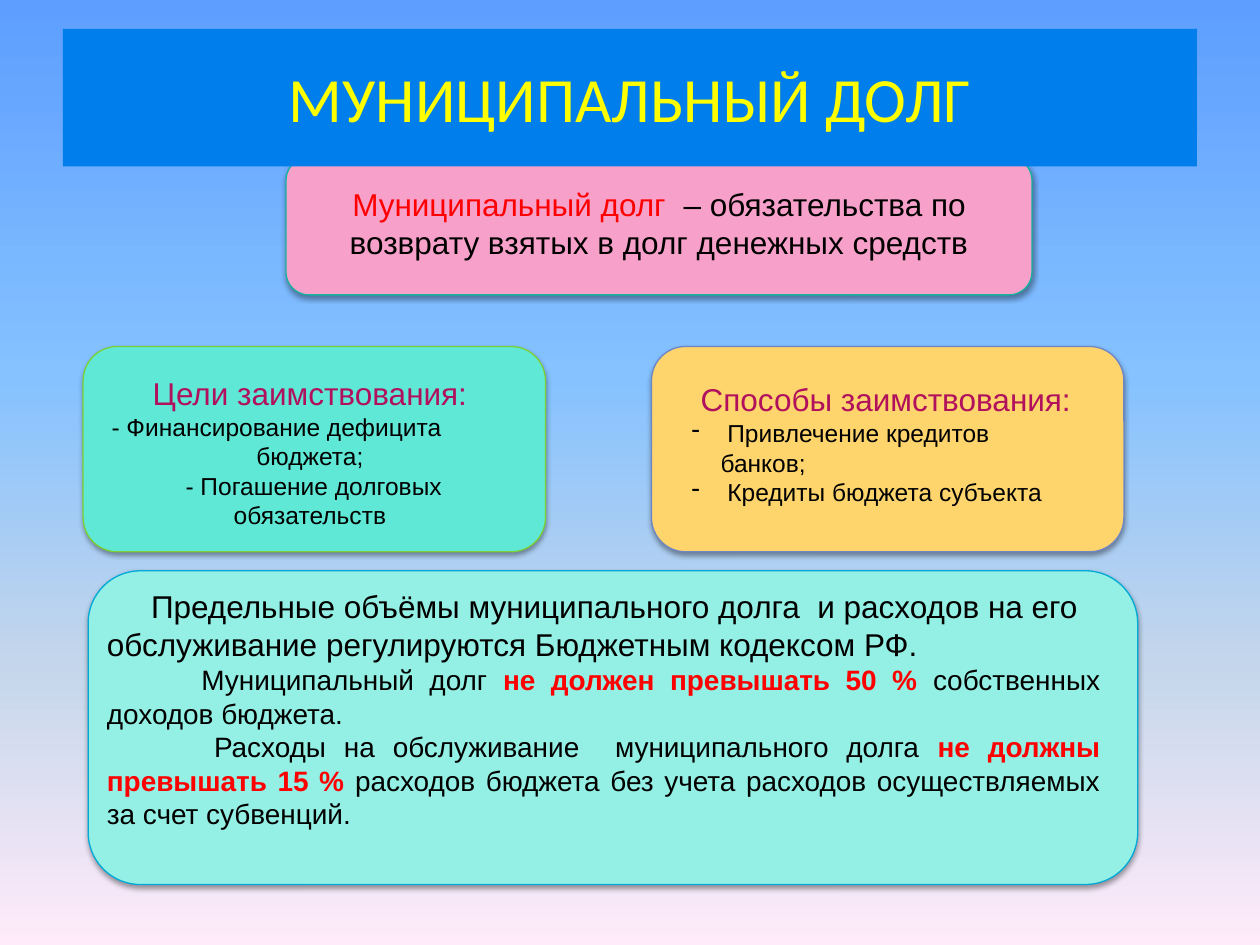
from dataclasses import dataclass
from lxml import etree
from pptx import Presentation
from pptx import util as u
from pptx.dml.color import RGBColor
from pptx.enum import shapes, text
from pptx.oxml import parse_xml
from pptx.oxml.ns import nsdecls, qn

Inches, Pt = u.Inches, u.Pt
CENTER, LEFT, JUSTIFY = text.PP_ALIGN.CENTER, text.PP_ALIGN.LEFT, text.PP_ALIGN.JUSTIFY


@dataclass(frozen=True)
class Theme:
    sky: tuple = ((0, "5E9EFF"), (40, "85C2FF"), (70, "C4D6EB"), (100, "FFEBFA"))
    banner: str = "007EEB"
    title: str = "FFFF00"
    heading: str = "B0105C"
    accent: str = "FF0000"
    ink: str = "000000"
    title_font: str = "Calibri"
    font: str = "Arial"
    title_size: int = 36
    lead_size: int = 18
    rule_size: int = 16
    item_size: int = 14


T = Theme()


def rgb(code):
    return RGBColor.from_string(code)


def set_background(s):
    """Fill the slide with the vertical sky gradient."""
    s.background.fill.gradient()
    grad = s.background._cSld.find(".//" + qn("a:gradFill"))
    stops = "".join(f'<a:gs pos="{pos * 1000}"><a:srgbClr val="{code}"/></a:gs>'
                    for pos, code in T.sky)
    grad.getparent().replace(grad, parse_xml(
        f'<a:gradFill {nsdecls("a")} rotWithShape="1"><a:gsLst>{stops}</a:gsLst>'
        '<a:lin ang="5400000" scaled="0"/></a:gradFill>'))


def add_shadow(sp):
    """Put a soft shadow just below the shape."""
    sp.shadow.inherit = False
    effects = sp._element.spPr.find(qn("a:effectLst"))
    effects.append(parse_xml(
        f'<a:outerShdw {nsdecls("a")} blurRad="{Pt(3.1)}" dist="{Pt(1.6)}" dir="5400000" '
        'rotWithShape="0"><a:srgbClr val="000000"><a:alpha val="38000"/></a:srgbClr>'
        '</a:outerShdw>'))


def add_panel(s, box, fill, line):
    sp = s.shapes.add_shape(shapes.MSO_SHAPE.ROUNDED_RECTANGLE, *map(Inches, box))
    sp.fill.solid()
    sp.fill.fore_color.rgb = rgb(fill)
    sp.line.color.rgb = rgb(line)
    sp.line.width = Pt(0.75)
    add_shadow(sp)


def write(p, runs, size, align=CENTER, first=0, left=0, right=0, bullet=None, font=T.font):
    """Fill a paragraph with (text, colour, bold) runs; margins are in inches."""
    p.alignment = align
    pPr = p._p.get_or_add_pPr()
    for name, value in (("marL", left), ("marR", right), ("indent", first)):
        pPr.set(name, str(Inches(value)))
    if bullet:
        etree.SubElement(pPr, qn("a:buChar"), char=bullet)
    for words, colour, bold in runs:
        r = p.add_run()
        r.text = words
        r.font.name, r.font.size, r.font.bold = font, Pt(size), bold
        r.font.color.rgb = rgb(colour)


def add_text(s, box, paragraphs):
    """Place a text box; each paragraph is (runs, size, layout options)."""
    tf = s.shapes.add_textbox(*map(Inches, box)).text_frame
    tf.word_wrap = True
    for i, (runs, size, layout) in enumerate(paragraphs):
        write(tf.add_paragraph() if i else tf.paragraphs[0], runs, size, **layout)


def add_title(s, box):
    sp = s.shapes.add_shape(shapes.MSO_SHAPE.RECTANGLE, *map(Inches, box))
    sp.shadow.inherit = False
    sp.fill.solid()
    sp.fill.fore_color.rgb = rgb(T.banner)
    sp.line.fill.background()
    tf = sp.text_frame
    tf.vertical_anchor = text.MSO_ANCHOR.MIDDLE
    write(tf.paragraphs[0], [("МУНИЦИПАЛЬНЫЙ ДОЛГ", T.title, False)], T.title_size,
          font=T.title_font)


def add_definition(s, box):
    add_text(s, box, [([
        ("Муниципальный долг  ", T.accent, False),
        ("– обязательства по возврату взятых в долг денежных средств", T.ink, False),
    ], T.lead_size, {})])


def add_list(s, box, heading, items):
    """Place a heading over (text, layout options) items."""
    add_text(s, box, [([(heading, T.heading, False)], T.lead_size, {})] + [
        ([(words, T.ink, False)], T.item_size, layout) for words, layout in items])


def add_limits(s, box):
    add_text(s, box, [
        ([("Предельные объёмы муниципального долга  и расходов на его обслуживание "
           "регулируются Бюджетным кодексом РФ.", T.ink, False)],
         T.lead_size, dict(align=LEFT, first=0.35)),
        ([("Муниципальный долг ", T.ink, False),
          ("не должен превышать 50 % ", T.accent, True),
          ("собственных доходов бюджета.", T.ink, False)],
         T.rule_size, dict(align=JUSTIFY, first=0.75)),
        ([("Расходы на обслуживание  муниципального долга ", T.ink, False),
          ("не должны превышать 15 % ", T.accent, True),
          ("расходов бюджета без учета расходов осуществляемых за счет субвенций.",
           T.ink, False)],
         T.rule_size, dict(align=JUSTIFY, first=0.85)),
    ])


def main():
    prs = Presentation()
    prs.slide_width, prs.slide_height = Inches(10), Inches(7.5)
    s = prs.slides.add_slide(prs.slide_layouts[6])
    set_background(s)

    add_panel(s, (0.7, 4.53, 8.33, 2.49), "94F0E4", "00A9D7")
    add_panel(s, (5.17, 2.75, 3.75, 1.63), "FED46C", "6E86C6")
    add_panel(s, (0.66, 2.75, 3.67, 1.63), "5FE8D6", "7CD036")
    add_panel(s, (2.27, 1.25, 5.92, 1.09), "F7A1CA", "16B39E")

    add_title(s, (0.5, 0.23, 9, 1.09))
    add_definition(s, (2.34, 1.42, 5.78, 0.71))
    add_list(s, (0.75, 2.92, 3.42, 1.35), "Цели заимствования:", [
        ("- Финансирование дефицита бюджета;", dict(first=-0.53, left=0.53, right=0.53)),
        ("- Погашение долговых обязательств", dict(first=0.06)),
    ])
    dash = dict(align=LEFT, first=-0.23, left=0.23, right=0.1, bullet="-")
    add_list(s, (5.39, 2.97, 3.28, 0.88), "Способы заимствования:", [
        (" Привлечение кредитов банков;", dash),
        (" Кредиты бюджета субъекта", dash),
    ])
    add_limits(s, (0.75, 4.61, 8.08, 2.05))
    prs.save("out.pptx")


if __name__ == "__main__":
    main()
